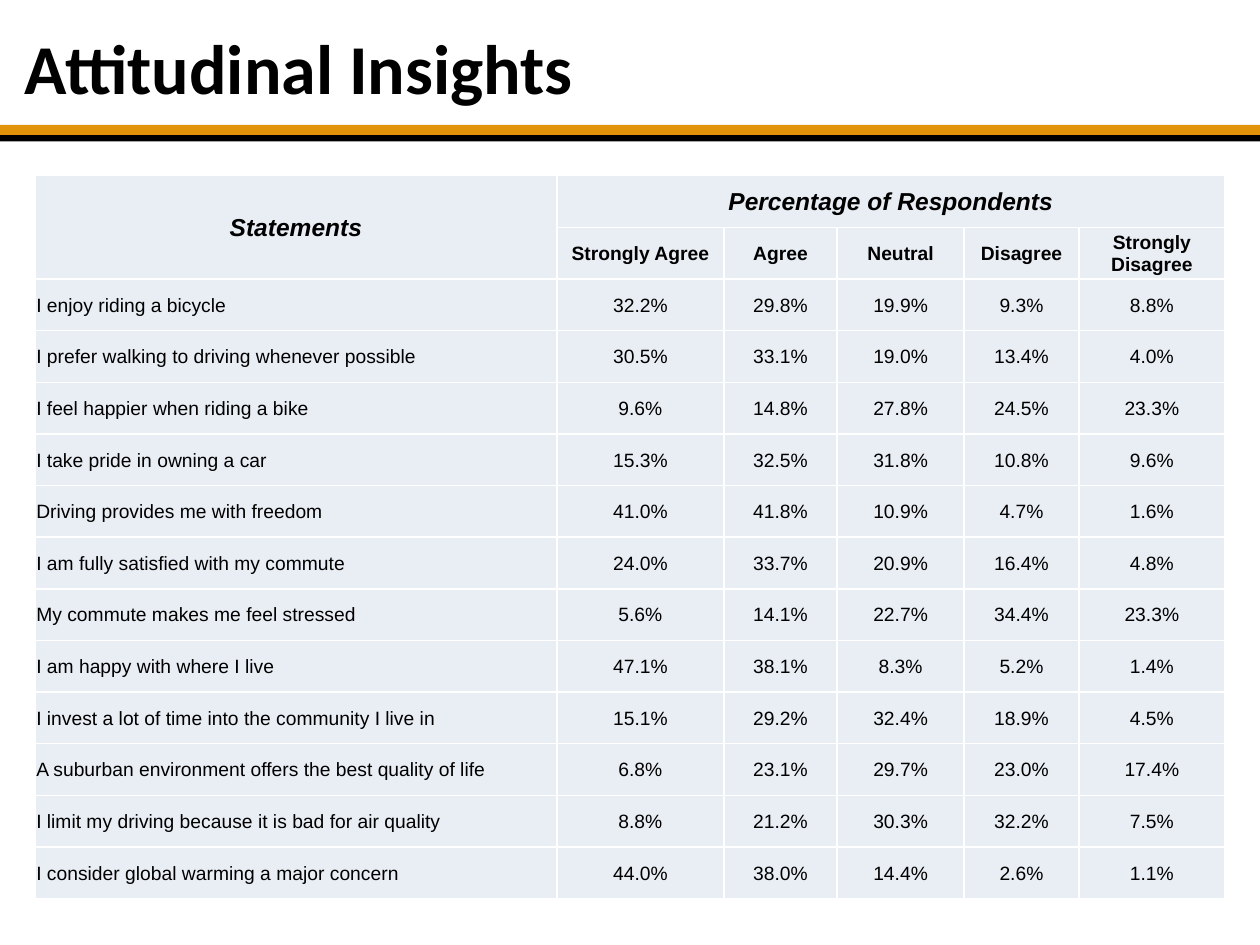
from dataclasses import dataclass

from lxml import etree
from pptx import Presentation
from pptx.dml.color import RGBColor
from pptx.enum.shapes import MSO_SHAPE
from pptx.enum.text import MSO_ANCHOR, PP_ALIGN
from pptx.oxml.ns import qn
from pptx.util import Pt

RECTANGLE = MSO_SHAPE.RECTANGLE
MIDDLE = MSO_ANCHOR.MIDDLE
LEFT, CENTER = PP_ALIGN.LEFT, PP_ALIGN.CENTER


@dataclass(frozen=True)
class Theme:
    black: str = "000000"
    orange: str = "E19409"
    cell: str = "E9EDF4"
    border: str = "FFFFFF"
    title_font: str = "Calibri"
    table_font: str = "Arial"
    title_size: float = 40
    heading_size: float = 14
    body_size: float = 11


THEME = Theme()


def write_text(text_frame, text, *, size=THEME.body_size, font=THEME.table_font,
               bold=False, italic=False, align=CENTER):
    paragraph = text_frame.paragraphs[0]
    paragraph.alignment = align
    run = paragraph.add_run()
    run.text = text
    run.font.size = Pt(size)
    run.font.name = font
    run.font.bold = bold
    run.font.italic = italic
    run.font.color.rgb = RGBColor.from_string(THEME.black)


def style_cell(cell):
    """Set the margins, the four thin borders and the fill of a table cell."""
    cell.vertical_anchor = MIDDLE
    cell.margin_left = cell.margin_right = cell.margin_top = Pt(0.72)
    cell.margin_bottom = Pt(0)
    properties = cell._tc.get_or_add_tcPr()
    for side in ("lnL", "lnR", "lnT", "lnB"):
        line = etree.SubElement(properties, qn(f"a:{side}"), w=str(Pt(1)))
        line_fill = etree.SubElement(line, qn("a:solidFill"))
        etree.SubElement(line_fill, qn("a:srgbClr"), val=THEME.border)
    cell.fill.solid()
    cell.fill.fore_color.rgb = RGBColor.from_string(THEME.cell)


presentation = Presentation()
presentation.slide_width = Pt(720)
presentation.slide_height = Pt(540)
slide = presentation.slides.add_slide(presentation.slide_layouts[6])

# Two-colour rule under the title
for top, height, color in ((71.4, 5.8, THEME.orange), (77.2, 3.6, THEME.black)):
    band = slide.shapes.add_shape(RECTANGLE, Pt(0), Pt(top), Pt(720), Pt(height))
    band.shadow.inherit = False
    band.fill.solid()
    band.fill.fore_color.rgb = RGBColor.from_string(color)
    band.line.fill.background()

title = slide.shapes.add_textbox(Pt(7.2), Pt(-7.2), Pt(648), Pt(90))
title.text_frame.word_wrap = True
title.text_frame.vertical_anchor = MIDDLE
write_text(title.text_frame, "Attitudinal Insights", size=THEME.title_size,
           font=THEME.title_font, bold=True, align=LEFT)

# Survey table
ANSWERS = ("Strongly Agree", "Agree", "Neutral", "Disagree", "Strongly Disagree")
RESPONSES = (
    ("I enjoy riding a bicycle", 32.2, 29.8, 19.9, 9.3, 8.8),
    ("I prefer walking to driving whenever possible", 30.5, 33.1, 19.0, 13.4, 4.0),
    ("I feel happier when riding a bike", 9.6, 14.8, 27.8, 24.5, 23.3),
    ("I take pride in owning a car", 15.3, 32.5, 31.8, 10.8, 9.6),
    ("Driving provides me with freedom", 41.0, 41.8, 10.9, 4.7, 1.6),
    ("I am fully satisfied with my commute", 24.0, 33.7, 20.9, 16.4, 4.8),
    ("My commute makes me feel stressed", 5.6, 14.1, 22.7, 34.4, 23.3),
    ("I am happy with where I live", 47.1, 38.1, 8.3, 5.2, 1.4),
    ("I invest a lot of time into the community I live in", 15.1, 29.2, 32.4, 18.9, 4.5),
    ("A suburban environment offers the best quality of life", 6.8, 23.1, 29.7, 23.0, 17.4),
    ("I limit my driving because it is bad for air quality", 8.8, 21.2, 30.3, 32.2, 7.5),
    ("I consider global warming a major concern", 44.0, 38.0, 14.4, 2.6, 1.1),
)
COLUMN_WIDTHS = (298.2, 95.6, 64.6, 72.6, 65.6, 83.4)
ROW_HEIGHT = 29.52
HEADER_ROWS = 2
row_count = HEADER_ROWS + len(RESPONSES)

table = slide.shapes.add_table(
    row_count, len(COLUMN_WIDTHS), Pt(20), Pt(100.4),
    Pt(sum(COLUMN_WIDTHS)), Pt(ROW_HEIGHT * row_count)).table
table.first_row = False
table.horz_banding = False
for column, width in zip(table.columns, COLUMN_WIDTHS):
    column.width = Pt(width)
for row in table.rows:
    row.height = Pt(ROW_HEIGHT)
for cell in table.iter_cells():
    style_cell(cell)

table.cell(0, 0).merge(table.cell(1, 0))
table.cell(0, 1).merge(table.cell(0, len(ANSWERS)))
for column_index, heading in enumerate(("Statements", "Percentage of Respondents")):
    write_text(table.cell(0, column_index).text_frame, heading,
               size=THEME.heading_size, bold=True, italic=True)
for column_index, answer in enumerate(ANSWERS, start=1):
    write_text(table.cell(1, column_index).text_frame, answer, bold=True)

for row_index, (statement, *shares) in enumerate(RESPONSES, start=HEADER_ROWS):
    write_text(table.cell(row_index, 0).text_frame, statement, align=LEFT)
    for column_index, share in enumerate(shares, start=1):
        write_text(table.cell(row_index, column_index).text_frame, f"{share:.1f}%")

presentation.save("out.pptx")
